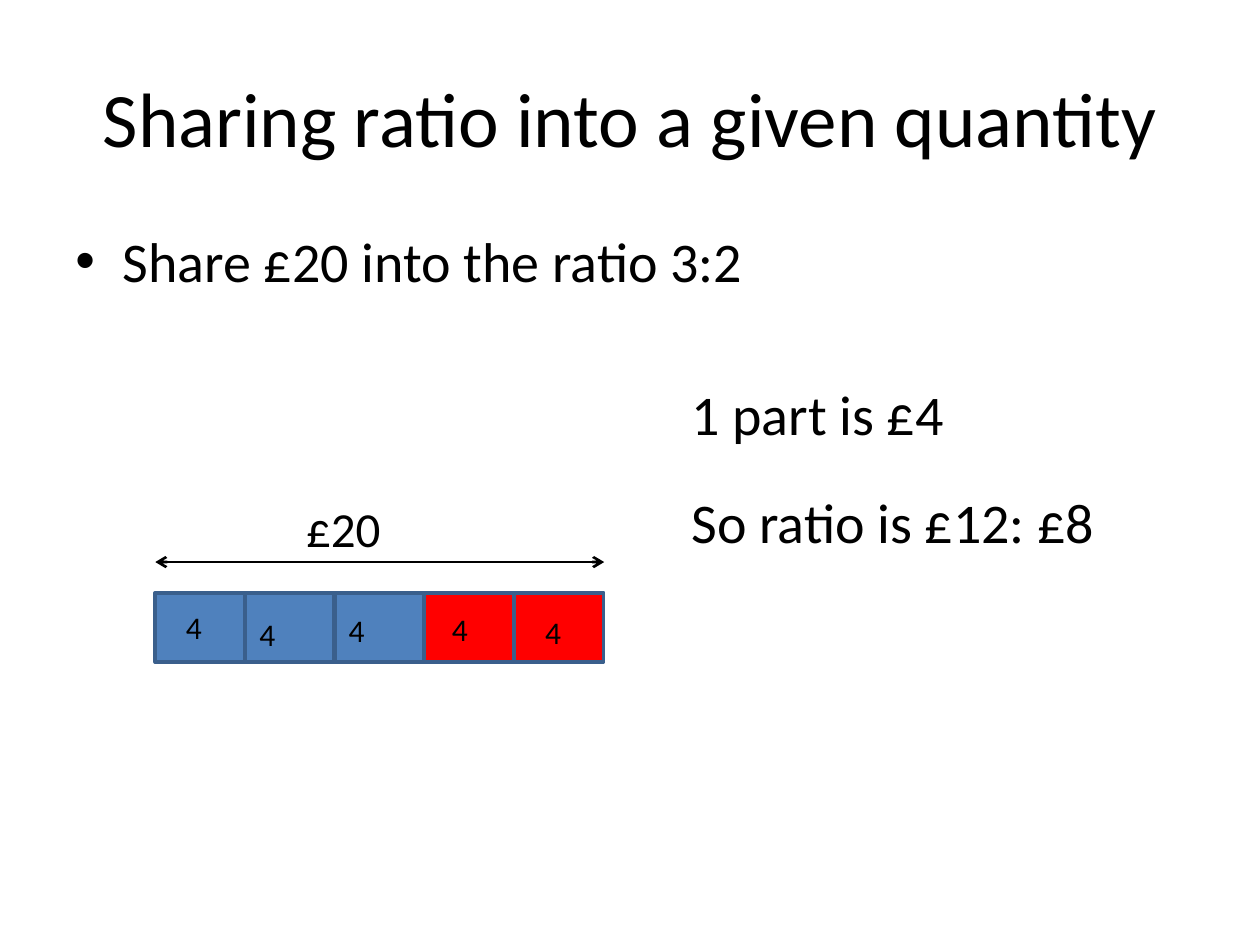
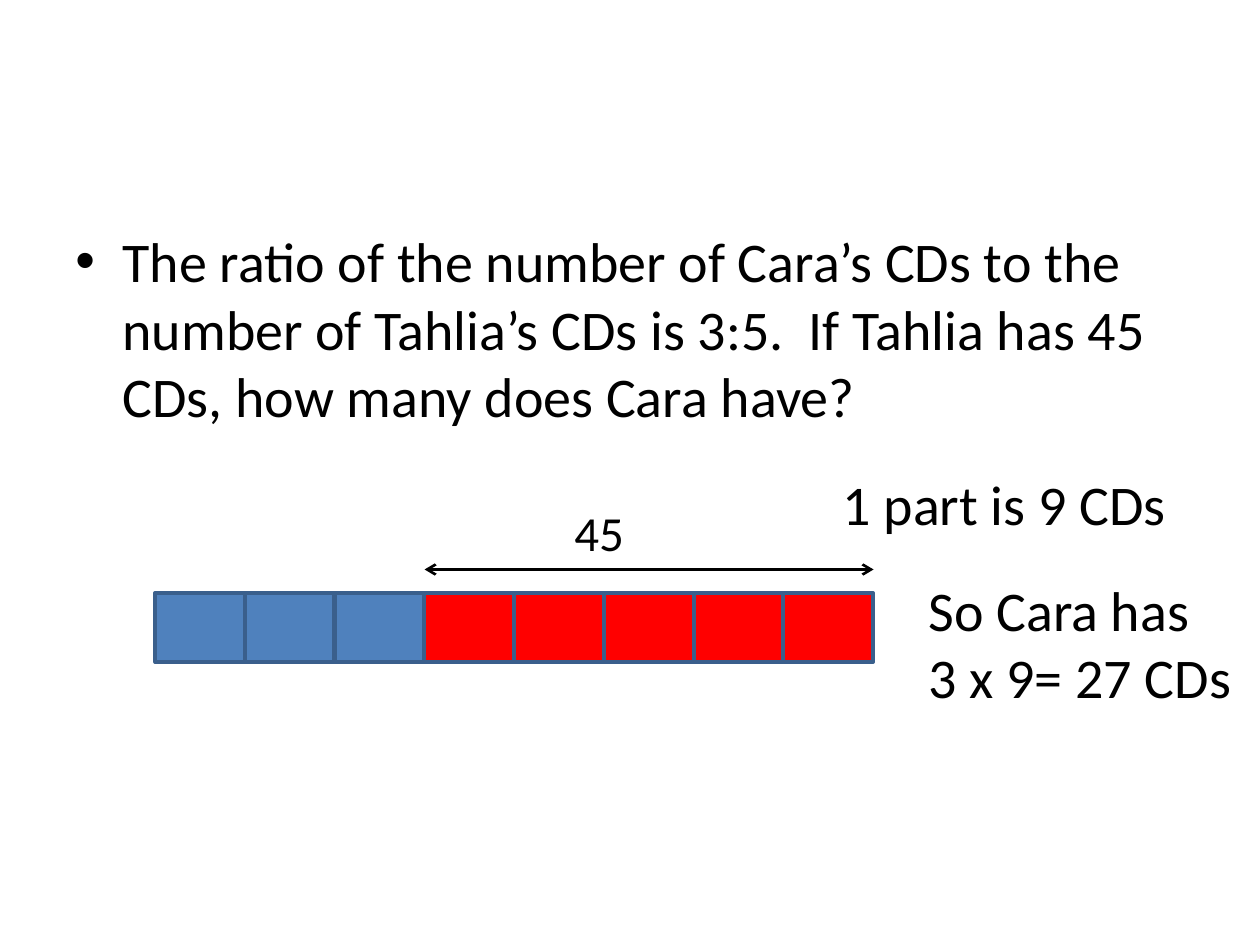
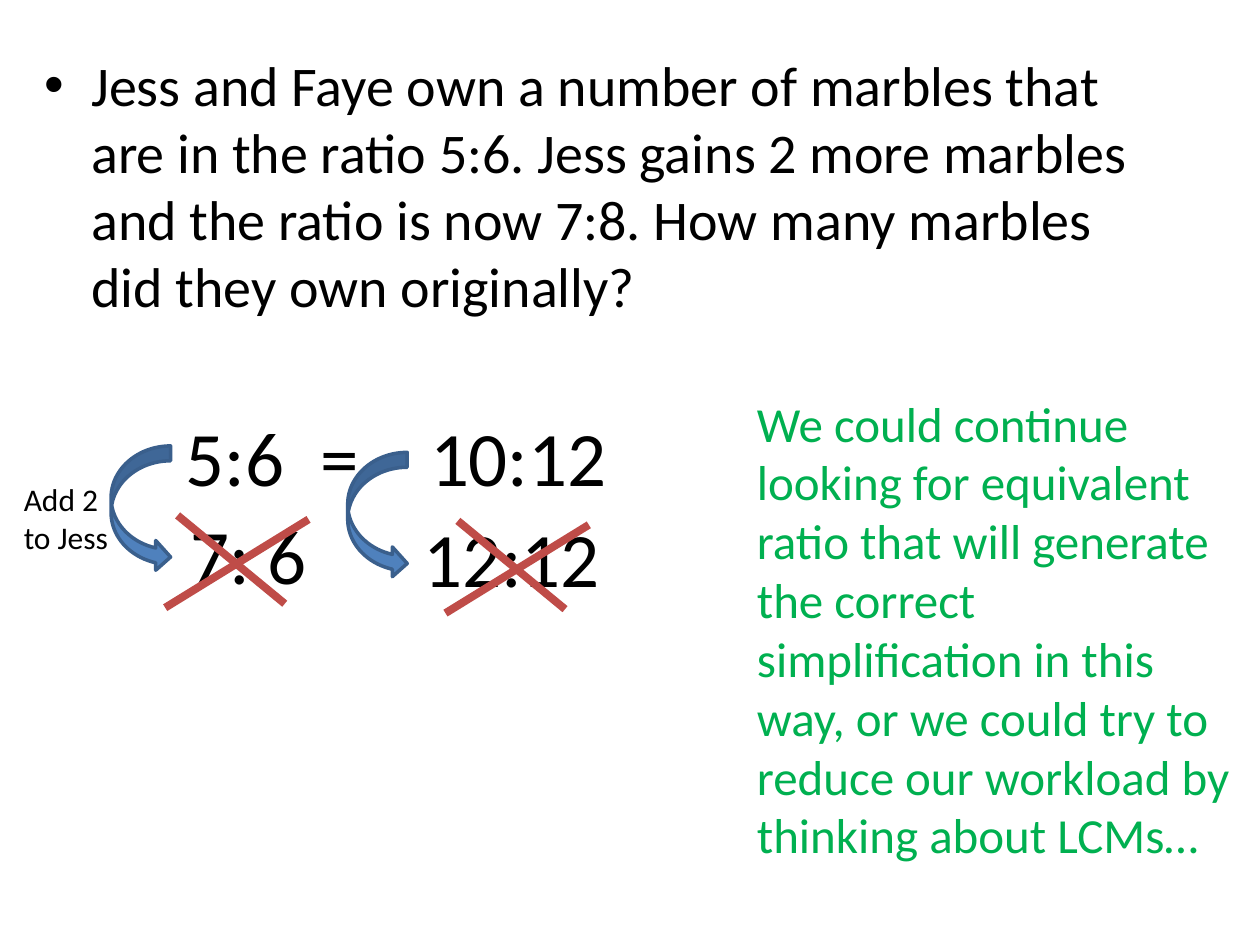
from lxml.etree import SubElement
from pptx import Presentation
from pptx.dml.color import RGBColor as Rgb
from pptx.enum.shapes import MSO_CONNECTOR as Connector, MSO_SHAPE as Shape
from pptx.enum.text import MSO_ANCHOR as Anchor, MSO_AUTO_SIZE as AutoSize, PP_ALIGN as Align
from pptx.oxml.ns import qn
from pptx.util import Cm, Pt

COLORS = {"text": "000000", "blue": "4F81BD", "red": "FF0000",
          "outline": "3A5F8C", "cross": "BF4C48", "green": "00B050"}
FONT = "Calibri"
BODY = (1.27, 4.45, 22.86, 12.57)
BAR_LEFT, BAR_TOP, PART_STEP, PART_WIDTH, PART_HEIGHT = 3.13, 11.95, 1.81, 1.8, 1.4


def add_text(page, text, left, top, width, height, size, color="text", bullet=False):
    box = page.shapes.add_textbox(Cm(left), Cm(top), Cm(width), Cm(height))
    frame = box.text_frame
    frame.word_wrap = True
    frame.auto_size = AutoSize.NONE if bullet else AutoSize.SHAPE_TO_FIT_TEXT
    frame.text = text
    for para in frame.paragraphs:
        para.font.name = FONT
        para.font.size = Pt(size)
        para.font.color.rgb = Rgb.from_string(COLORS[color])
        if bullet:
            para.space_before = Pt(size * 0.2)
            props = para._p.get_or_add_pPr()
            props.set("marL", str(Cm(0.95)))
            props.set("indent", str(-Cm(0.95)))
            SubElement(props, qn("a:buFont"), typeface="Arial")
            SubElement(props, qn("a:buChar"), char="•")


def add_line(page, start, end, color, width, arrows=False):
    line = page.shapes.add_connector(Connector.STRAIGHT, *map(Cm, start + end))
    line.line.color.rgb = Rgb.from_string(COLORS[color])
    line.line.width = Pt(width)
    if arrows:
        for tag in ("a:headEnd", "a:tailEnd"):
            SubElement(line.line._get_or_add_ln(), qn(tag), type="arrow")
    SubElement(line._element.spPr, qn("a:effectLst"))


deck = Presentation()
deck.slide_width, deck.slide_height = Cm(25.4), Cm(19.05)
title_only, blank = deck.slide_layouts[5], deck.slide_layouts[6]
sharing, cds, marbles = [deck.slides.add_slide(layout) for layout in (title_only, blank, blank)]

# Title
title = sharing.shapes.title
title.left, title.top, title.width, title.height = Cm(1.27), Cm(0.76), Cm(22.86), Cm(3.18)
title.text_frame.text = "Sharing ratio into a given quantity"
title.text_frame.vertical_anchor = Anchor.MIDDLE
heading = title.text_frame.paragraphs[0]
heading.alignment = Align.CENTER
heading.font.name, heading.font.size = FONT, Pt(44)
heading.font.color.rgb = Rgb.from_string(COLORS["text"])

# Questions
add_text(sharing, "Share £20 into the ratio 3:2", *BODY, 32, bullet=True)
add_text(cds, "The ratio of the number of Cara’s CDs to the number of Tahlia’s CDs is 3:5.  "
         "If Tahlia has 45 CDs, how many does Cara have?", *BODY, 32, bullet=True)
add_text(marbles, "Jess and Faye own a number of marbles that are in the ratio 5:6. "
         "Jess gains 2 more marbles and the ratio is now 7:8. "
         "How many marbles did they own originally?", 0.64, 0.89, *BODY[2:], 32, bullet=True)

# Ratio bars, each with an arrow over the parts whose total is known
for page, blue_parts, red_parts, first_known, arrow_top in (
        (sharing, 3, 2, 0, 11.33), (cds, 3, 5, 3, 11.48)):
    part_colors = ["blue"] * blue_parts + ["red"] * red_parts
    for index, color in enumerate(part_colors):
        part = page.shapes.add_shape(
            Shape.RECTANGLE, Cm(BAR_LEFT + index * PART_STEP), Cm(BAR_TOP),
            Cm(PART_WIDTH), Cm(PART_HEIGHT))
        part.shadow.inherit = False
        part.fill.solid()
        part.fill.fore_color.rgb = Rgb.from_string(COLORS[color])
        part.line.color.rgb = Rgb.from_string(COLORS["outline"])
        part.line.width = Pt(2)
    add_line(page, (BAR_LEFT + first_known * PART_STEP, arrow_top),
             (BAR_LEFT + len(part_colors) * PART_STEP, arrow_top), "text", 1.5, arrows=True)

# Sharing £20: labels and answer
add_text(sharing, "£20", 5.92, 9.93, 2.74, 1.45, 28)
for left, top in ((3.5, 12.14), (4.98, 12.27), (6.78, 12.19), (8.86, 12.17), (10.74, 12.24)):
    add_text(sharing, "4", left, top, 1.4, 1.02, 18)
add_text(sharing, "1 part is £4", 13.69, 7.52, 7.39, 1.63, 32)
add_text(sharing, "So ratio is £12: £8", 13.69, 9.7, 9.19, 1.63, 32)

# CDs: label and answer
add_text(cds, "45", 11.33, 10.01, 2.74, 1.45, 28)
add_text(cds, "1 part is 9 CDs", 16.74, 9.35, 7.39, 1.63, 32)
add_text(cds, "So Cara has\n3 x 9= 27 CDs", 18.47, 11.48, 7.39, 3, 32)

# Marbles: ratios before and after the gain
for text, left, top, width in (("5:6", 3.5, 8.13, 3), ("=", 6.22, 8.13, 1.5),
                               ("10:12", 8.42, 8.13, 6), ("7: 6", 3.6, 10.11, 4),
                               ("12:12", 8.28, 10.16, 6)):
    add_text(marbles, text, left, top, width, 2.13, 44)
add_text(marbles, "Add 2 to Jess", 0.23, 9.55, 2.46, 1.8, 18)

# Curved arrows from each ratio to the next
for left, top in ((2.24, 8.99), (7.01, 9.12)):
    arrow = marbles.shapes.add_shape(Shape.CURVED_RIGHT_ARROW, Cm(left), Cm(top), Cm(1.2), Cm(2.54))
    arrow.shadow.inherit = False
    arrow.fill.solid()
    arrow.fill.fore_color.rgb = Rgb.from_string(COLORS["blue"])
    arrow.line.color.rgb = Rgb.from_string(COLORS["outline"])
    arrow.line.width = Pt(2)

# Crosses over the ratios that fail
for left, top in ((3.58, 10.39), (9.23, 10.5)):
    add_line(marbles, (left, top), (left + 2.16, top + 1.78), "cross", 4.5)
    add_line(marbles, (left + 2.64, top + 0.08), (left - 0.25, top + 1.86), "cross", 4.5)

# Comment on the method
add_text(marbles, "We could continue looking for equivalent ratio that will generate the correct "
         "simplification in this way, or we could try to reduce our workload by "
         "thinking about LCMs…", 15.01, 7.8, 10.08, 9.83, 28, "green")

deck.save("out.pptx")
